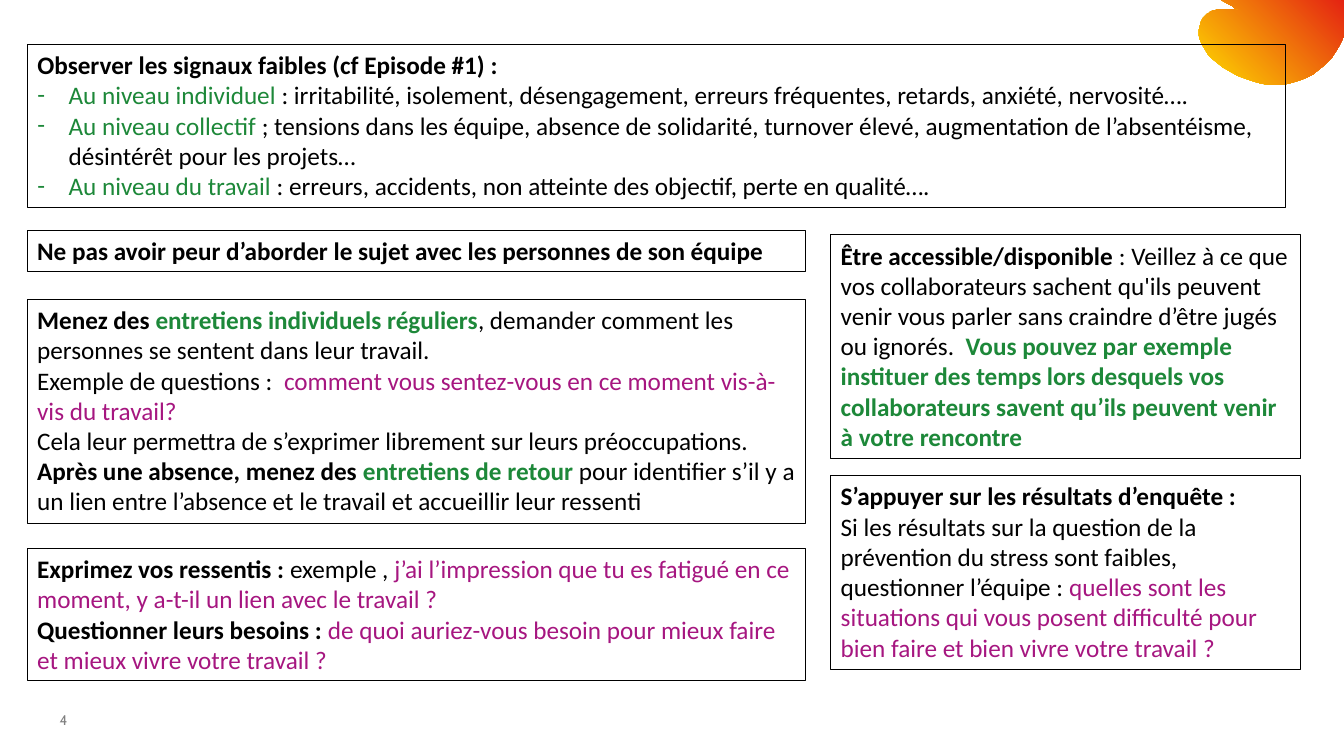
from lxml import etree
from pptx import Presentation
from pptx.dml.color import RGBColor
from pptx.enum.shapes import MSO_SHAPE
from pptx.enum.text import MSO_ANCHOR, MSO_AUTO_SIZE, PP_ALIGN
from pptx.oxml.ns import qn
from pptx.util import Pt

PX = 9144
RECTANGLE = MSO_SHAPE.RECTANGLE
TOP, BOTTOM = MSO_ANCHOR.TOP, MSO_ANCHOR.BOTTOM
NO_AUTOFIT = MSO_AUTO_SIZE.NONE
LEFT = PP_ALIGN.LEFT

COLORS = {
    "text": "000000",
    "advice": "1D8839",
    "question": "A61680",
    "number": "808080",
    "yellow": "FFDD00",
    "red": "E42312",
}
STYLES = {
    "plain": ("text", False),
    "bold": ("text", True),
    "advice": ("advice", False),
    "strong": ("advice", True),
    "question": ("question", False),
}

LEFT_X, LEFT_W = 27, 772
RIGHT_X, RIGHT_W = 824, 466

SIGNALS_AREA = (LEFT_X, 44, 1248, 162)
SIGNALS = [
    [("Observer les signaux faibles (cf Episode #1) :", "bold")],
    [("Au niveau individuel ", "advice"),
     (": irritabilité, isolement, désengagement, erreurs fréquentes, retards, "
      "anxiété, nervosité….", "plain")],
    [("Au niveau collectif ", "advice"),
     ("; tensions dans les équipe, absence de solidarité, turnover élevé, "
      "augmentation de l’absentéisme, désintérêt pour les projets…", "plain")],
    [("Au niveau du travail ", "advice"),
     (": erreurs, accidents, non atteinte des objectif, perte en qualité….", "plain")],
]
ADVICE_BOXES = [
    ((LEFT_X, 297, LEFT_W, 222), [
        [("Menez des ", "bold"),
         ("entretiens individuels réguliers", "strong"),
         (", demander comment les personnes se sentent dans leur travail.", "plain")],
        [("Exemple de questions :  ", "plain"),
         ("comment vous sentez-vous en ce moment vis-à-vis du travail?", "question")],
        [("Cela leur permettra de s’exprimer librement sur leurs préoccupations.", "plain")],
        [("Après une absence, menez des ", "bold"),
         ("entretiens de retour ", "strong"),
         ("pour identifier s’il y a un lien entre l’absence et le travail et "
          "accueillir leur ressenti", "plain")],
    ]),
    ((RIGHT_X, 233, RIGHT_W, 222), [
        [("Être accessible/disponible ", "bold"),
         (": Veillez à ce que vos collaborateurs sachent qu'ils peuvent venir vous "
          "parler sans craindre d’être jugés ou ignorés.  ", "plain"),
         ("Vous pouvez par exemple instituer des temps lors desquels vos "
          "collaborateurs savent qu’ils peuvent venir à votre rencontre", "strong")],
    ]),
    ((RIGHT_X, 472, RIGHT_W, 192), [
        [("S’appuyer sur les résultats d’enquête :", "bold")],
        [("Si les résultats sur la question de la prévention du stress sont faibles, "
          "questionner l’équipe : ", "plain"),
         ("quelles sont les situations qui vous posent difficulté pour bien faire et "
          "bien vivre votre travail ?", "question")],
    ]),
    ((LEFT_X, 544, LEFT_W, 131), [
        [("Exprimez vos ressentis : ", "bold"),
         ("exemple , ", "plain"),
         ("j’ai l’impression que tu es fatigué en ce moment, y a-t-il un lien avec "
          "le travail ?", "question")],
        [("Questionner leurs besoins : ", "bold"),
         ("de quoi auriez-vous besoin pour mieux faire et mieux vivre votre travail ?",
          "question")],
    ]),
    ((LEFT_X, 229, LEFT_W, 40), [
        [("Ne pas avoir peur d’aborder le sujet avec les personnes de son équipe", "bold")],
    ]),
]

PETAL_START = (1211, 0)
PETAL_EDGE = [(1333, 0), (1333, 35), (1331, 40)]
PETAL_CURVES = [
    ((1316, 72), (1283, 92), (1244, 81)),
    ((1195, 68), (1178, 31), (1196, 15)),
    ((1203, 8), (1214, 7), (1232, 11)),
    ((1228, 10), (1224, 8), (1220, 5)),
]


def rgb(name):
    return RGBColor.from_string(COLORS[name])


def place(shape, area):
    shape.left, shape.top, shape.width, shape.height = (v * PX for v in area)


def add_run(paragraph, text, size, font_name, color, bold=False):
    run = paragraph.add_run()
    run.text = text
    run.font.size = Pt(size)
    run.font.name = font_name
    run.font.bold = bold
    run.font.color.rgb = rgb(color)


def set_bullet(paragraph, dash):
    props = paragraph._p.get_or_add_pPr()
    props.set("marL", str(31 * PX if dash else 0))
    props.set("indent", str(-31 * PX if dash else 0))
    if dash:
        etree.SubElement(props, qn("a:buFont")).set("typeface", "Calibri")
        etree.SubElement(props, qn("a:buChar")).set("char", "-")
    else:
        etree.SubElement(props, qn("a:buNone"))


def fill_box(box, paragraphs, dashed=False):
    box.fill.background()
    box.line.color.rgb = rgb("text")
    box.line.width = Pt(0.75)
    frame = box.text_frame
    frame.word_wrap = True
    frame.auto_size = NO_AUTOFIT
    frame.vertical_anchor = TOP
    for index, runs in enumerate(paragraphs):
        paragraph = frame.add_paragraph() if index else frame.paragraphs[0]
        set_bullet(paragraph, dashed and index > 0)
        paragraph.alignment = LEFT
        paragraph.space_before = Pt(0)
        for text, style in runs:
            color, bold = STYLES[style]
            add_run(paragraph, text, 18, "Calibri", color, bold)


def add_advice_box(slide, area, paragraphs):
    box = slide.shapes.add_shape(RECTANGLE, *(v * PX for v in area))
    box.shadow.inherit = False
    fill_box(box, paragraphs)


def curve_points(start, control_a, control_b, end, steps=16):
    for step in range(1, steps + 1):
        t = step / steps
        weights = ((1 - t) ** 3, 3 * t * (1 - t) ** 2, 3 * t * t * (1 - t), t ** 3)
        knots = (start, control_a, control_b, end)
        yield tuple(sum(w * k[axis] for w, k in zip(weights, knots)) for axis in (0, 1))


def add_petal(slide):
    outline = list(PETAL_EDGE)
    for curve in PETAL_CURVES:
        outline.extend(curve_points(outline[-1], *curve))
    builder = slide.shapes.build_freeform(*PETAL_START, scale=PX)
    builder.add_line_segments(outline, close=True)
    petal = builder.convert_to_shape()
    petal.shadow.inherit = False
    petal.line.fill.background()
    petal.fill.gradient()
    petal.fill.gradient_angle = 45
    for stop, position, color in zip(petal.fill.gradient_stops, (0, 1), ("yellow", "red")):
        stop.position = position
        stop.color.rgb = rgb(color)


def add_page_number(slide, number):
    label = slide.shapes.add_textbox(*(v * PX for v in (59, 709, 79, 14)))
    frame = label.text_frame
    frame.word_wrap = True
    frame.vertical_anchor = BOTTOM
    frame.margin_left = frame.margin_right = frame.margin_top = frame.margin_bottom = 0
    add_run(frame.paragraphs[0], number, 10, "Cabin", "number")


def main():
    deck = Presentation()
    deck.slide_width, deck.slide_height = 1333 * PX, 750 * PX
    slide = deck.slides.add_slide(deck.slide_layouts[1])
    title, signals = slide.placeholders
    title.element.getparent().remove(title.element)
    add_petal(slide)
    add_page_number(slide, "4")
    slide.shapes._spTree.append(signals.element)
    place(signals, SIGNALS_AREA)
    fill_box(signals, SIGNALS, dashed=True)
    for area, paragraphs in ADVICE_BOXES:
        add_advice_box(slide, area, paragraphs)
    deck.save("out.pptx")


if __name__ == "__main__":
    main()
